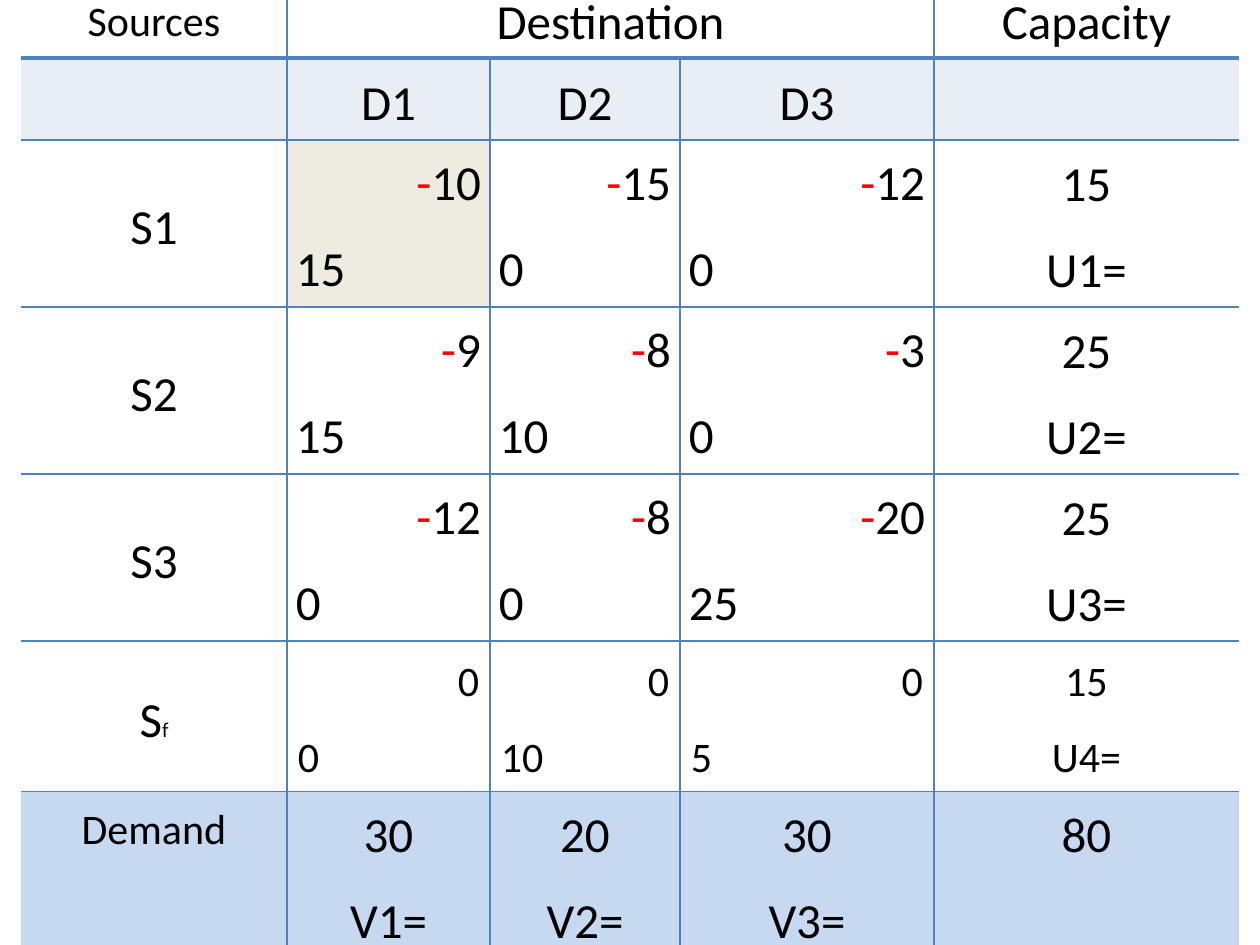
import lxml.etree
import pptx
import pptx.dml.color
import pptx.enum.text
import pptx.oxml.ns
import pptx.util

RGBColor = pptx.dml.color.RGBColor
ALIGN = pptx.enum.text.PP_ALIGN
ANCHOR = pptx.enum.text.MSO_ANCHOR

BLACK = RGBColor(0x00, 0x00, 0x00)
WHITE = RGBColor(0xFF, 0xFF, 0xFF)
RED = RGBColor(0xFF, 0x00, 0x00)
RULE_BLUE = RGBColor(0x4F, 0x81, 0xBD)
HEADING_BLUE = RGBColor(0xE9, 0xED, 0xF4)
DEMAND_BLUE = RGBColor(0xC6, 0xD9, 0xF1)
ENTERING_TAN = RGBColor(0xEE, 0xEC, 0xE1)

COLUMN_WIDTHS = [266, 203, 190, 254, 305]
ROW_HEIGHTS = [77, 82, 167, 167, 167, 151, 96]
DESTINATIONS = ["D1", "D2", "D3"]
SOURCES = [
    ("S1", [("10", "15"), ("15", "0"), ("12", "0")], "15"),
    ("S2", [("9", "15"), ("8", "10"), ("3", "0")], "25"),
    ("S3", [("12", "0"), ("8", "0"), ("20", "25")], "25"),
]
DUMMY_SOURCE = [("0", "0"), ("0", "10"), ("0", "5")]
DEMANDS = ["30", "20", "30"]


def px(length):
    """Turn a length in pixels into EMU."""
    return pptx.util.Emu(round(length * 914400 / 126))


def add_text(paragraph, text, *, size=28, color=BLACK, align=ALIGN.CENTER):
    """Append a formatted run to a paragraph."""
    paragraph.alignment = align
    paragraph.line_spacing = 1.15
    paragraph.space_after = pptx.util.Pt(10)
    run = paragraph.add_run()
    run.text = text
    run.font.name = "Calibri"
    run.font.size = pptx.util.Pt(size)
    run.font.color.rgb = color


def add_lines(cell, lines, **text_format):
    """Write each line as one paragraph of a cell."""
    frame = cell.text_frame
    for index, line in enumerate(lines):
        paragraph = frame.add_paragraph() if index else frame.paragraphs[0]
        add_text(paragraph, line, **text_format)


def add_cost(cell, cost, amount, *, size=28, sign="-"):
    """Write a right-aligned cost above a left-aligned allocation."""
    frame = cell.text_frame
    cost_paragraph = frame.paragraphs[0]
    if sign:
        add_text(cost_paragraph, sign, size=size, color=RED, align=ALIGN.RIGHT)
    add_text(cost_paragraph, cost, size=size, align=ALIGN.RIGHT)
    add_text(frame.add_paragraph(), amount, size=size, align=ALIGN.LEFT)


def set_borders(cell, widths):
    """Draw the cell's sides at the given point widths, or none for zero."""
    properties = cell._tc.get_or_add_tcPr()
    for side in "LRTB":
        width = widths.get(side, 0)
        line = lxml.etree.SubElement(properties, pptx.oxml.ns.qn(f"a:ln{side}"))
        line.set("w", str(pptx.util.Pt(width)))
        if width:
            fill = lxml.etree.SubElement(line, pptx.oxml.ns.qn("a:solidFill"))
            color = lxml.etree.SubElement(fill, pptx.oxml.ns.qn("a:srgbClr"))
            color.set("val", str(RULE_BLUE))
        else:
            lxml.etree.SubElement(line, pptx.oxml.ns.qn("a:noFill"))


def format_cells(table):
    """Set margins, anchors, rules and fills for the whole grid."""
    last_row, last_column = len(ROW_HEIGHTS) - 1, len(COLUMN_WIDTHS) - 1
    fills = {1: HEADING_BLUE, 4: WHITE, 5: WHITE, last_row: DEMAND_BLUE}
    for row in range(last_row + 1):
        for column in range(last_column + 1):
            cell = table.cell(row, column)
            cell.margin_left = cell.margin_right = px(11 if row == 5 else 9)
            cell.margin_top = cell.margin_bottom = px(5)
            is_cost = row in (2, 3, 4) and 0 < column < last_column
            top = is_cost or row == last_row
            cell.vertical_anchor = ANCHOR.TOP if top else ANCHOR.MIDDLE
            set_borders(cell, {
                "L": 1 if column > 0 else 0,
                "R": 1 if column < last_column else 0,
                "T": {0: 0, 1: 2.25}.get(row, 1),
                "B": {0: 2.25, last_row: 0}.get(row, 1),
            })
            color = ENTERING_TAN if (row, column) == (2, 1) else fills.get(row)
            if color is None:
                cell.fill.background()
            else:
                cell.fill.solid()
                cell.fill.fore_color.rgb = color


def fill_headings(table):
    """Write the two heading rows."""
    add_lines(table.cell(0, 0), ["Sources"], size=24)
    add_lines(table.cell(0, 1), ["Destination"])
    add_lines(table.cell(0, 4), ["Capacity"])
    for column, destination in enumerate(DESTINATIONS, 1):
        add_lines(table.cell(1, column), [destination])


def fill_sources(table):
    """Write the source rows, the dummy source last."""
    for number, (source, costs, capacity) in enumerate(SOURCES, 1):
        row = number + 1
        add_lines(table.cell(row, 0), [source])
        for column, (cost, amount) in enumerate(costs, 1):
            add_cost(table.cell(row, column), cost, amount)
        add_lines(table.cell(row, 4), [capacity, f"U{number}="])
    name = table.cell(5, 0).text_frame.paragraphs[0]
    add_text(name, "S")
    add_text(name, "f", size=12)
    for column, (cost, amount) in enumerate(DUMMY_SOURCE, 1):
        add_cost(table.cell(5, column), cost, amount, size=24, sign="")
    add_lines(table.cell(5, 4), ["15", "U4="], size=24)


def fill_demand(table):
    """Write the demand row."""
    add_lines(table.cell(6, 0), ["Demand"], size=24)
    for column, demand in enumerate(DEMANDS, 1):
        add_lines(table.cell(6, column), [demand, f"V{column}="])
    add_lines(table.cell(6, 4), ["80"])


def add_transport_table(slide, left, top):
    """Place the transportation table with its corner at left, top."""
    shape = slide.shapes.add_table(
        len(ROW_HEIGHTS), len(COLUMN_WIDTHS), px(left), px(top),
        px(sum(COLUMN_WIDTHS)), px(sum(ROW_HEIGHTS)))
    table = shape.table
    table.first_row = table.horz_banding = False
    for column, width in zip(table.columns, COLUMN_WIDTHS):
        column.width = px(width)
    for row, height in zip(table.rows, ROW_HEIGHTS):
        row.height = px(height)
    format_cells(table)
    table.cell(0, 1).merge(table.cell(0, 3))
    fill_headings(table)
    fill_sources(table)
    fill_demand(table)


def main():
    """Build and save the presentation."""
    presentation = pptx.Presentation()
    presentation.slide_width = px(1260)
    presentation.slide_height = px(945)
    slide = presentation.slides.add_slide(presentation.slide_layouts[6])
    add_transport_table(slide, 21, -21)
    presentation.save("out.pptx")


if __name__ == "__main__":
    main()
